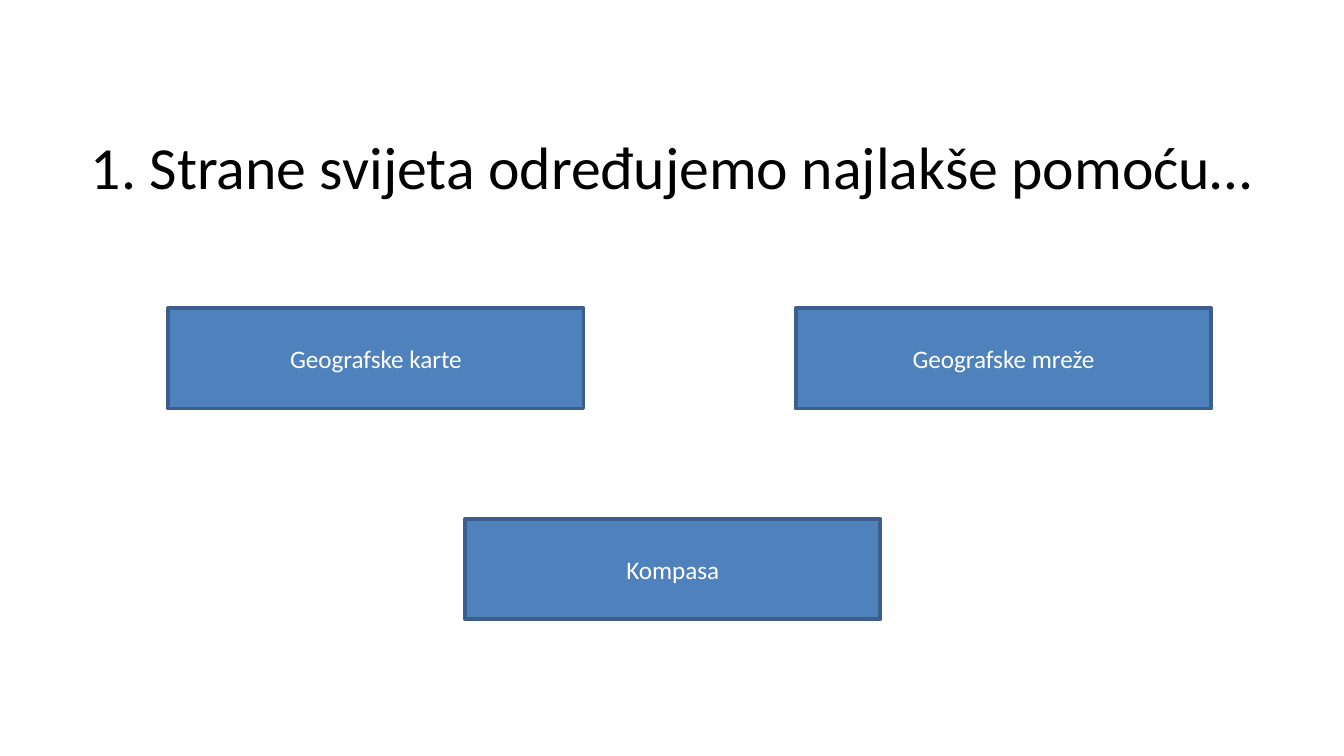
from dataclasses import dataclass

from pptx import Presentation
from pptx.dml.color import RGBColor
from pptx.enum.shapes import MSO_SHAPE
from pptx.enum.text import MSO_ANCHOR, MSO_AUTO_SIZE, PP_ALIGN
from pptx.util import Cm, Pt

RECT = MSO_SHAPE.RECTANGLE
MIDDLE = MSO_ANCHOR.MIDDLE
CENTER = PP_ALIGN.CENTER
NO_FIT = MSO_AUTO_SIZE.NONE
TITLE_ONLY = 5


@dataclass(frozen=True)
class Theme:
    font: str = "Calibri"
    ink: str = "000000"
    paper: str = "FFFFFF"
    fill: str = "4F81BD"
    edge: str = "3A5F8C"
    title: float = 32
    label: float = 13.5
    line: float = 2


THEME = Theme()
WIDTH, HEIGHT = 25.4, 14.28
BOX_W, BOX_H = 7.85, 1.9
ANSWERS = (
    ("Geografske karte", 3.18, 5.82),
    ("Geografske mreže", 15.04, 5.82),
    ("Kompasa", 8.79, 9.8),
)


def rgb(code):
    return RGBColor.from_string(code)


def write(shape, text, size, color):
    frame = shape.text_frame
    frame.text = text
    frame.word_wrap = True
    frame.auto_size = NO_FIT
    frame.vertical_anchor = MIDDLE
    para = frame.paragraphs[0]
    para.alignment = CENTER
    para.font.name = THEME.font
    para.font.size = Pt(size)
    para.font.color.rgb = rgb(color)


def add_title(slide, text):
    title = slide.shapes.title
    title.left, title.top = Cm(1.27), Cm(2.13)
    title.width, title.height = Cm(22.86), Cm(1.98)
    write(title, text, THEME.title, THEME.ink)


def add_answer(slide, text, left, top):
    box = slide.shapes.add_shape(RECT, Cm(left), Cm(top), Cm(BOX_W), Cm(BOX_H))
    box.shadow.inherit = False
    box.fill.solid()
    box.fill.fore_color.rgb = rgb(THEME.fill)
    box.line.color.rgb = rgb(THEME.edge)
    box.line.width = Pt(THEME.line)
    write(box, text, THEME.label, THEME.paper)


def main():
    deck = Presentation()
    deck.slide_width, deck.slide_height = Cm(WIDTH), Cm(HEIGHT)
    slide = deck.slides.add_slide(deck.slide_layouts[TITLE_ONLY])
    add_title(slide, "1. Strane svijeta određujemo najlakše pomoću…")
    for text, left, top in ANSWERS:
        add_answer(slide, text, left, top)
    deck.save("out.pptx")


if __name__ == "__main__":
    main()
